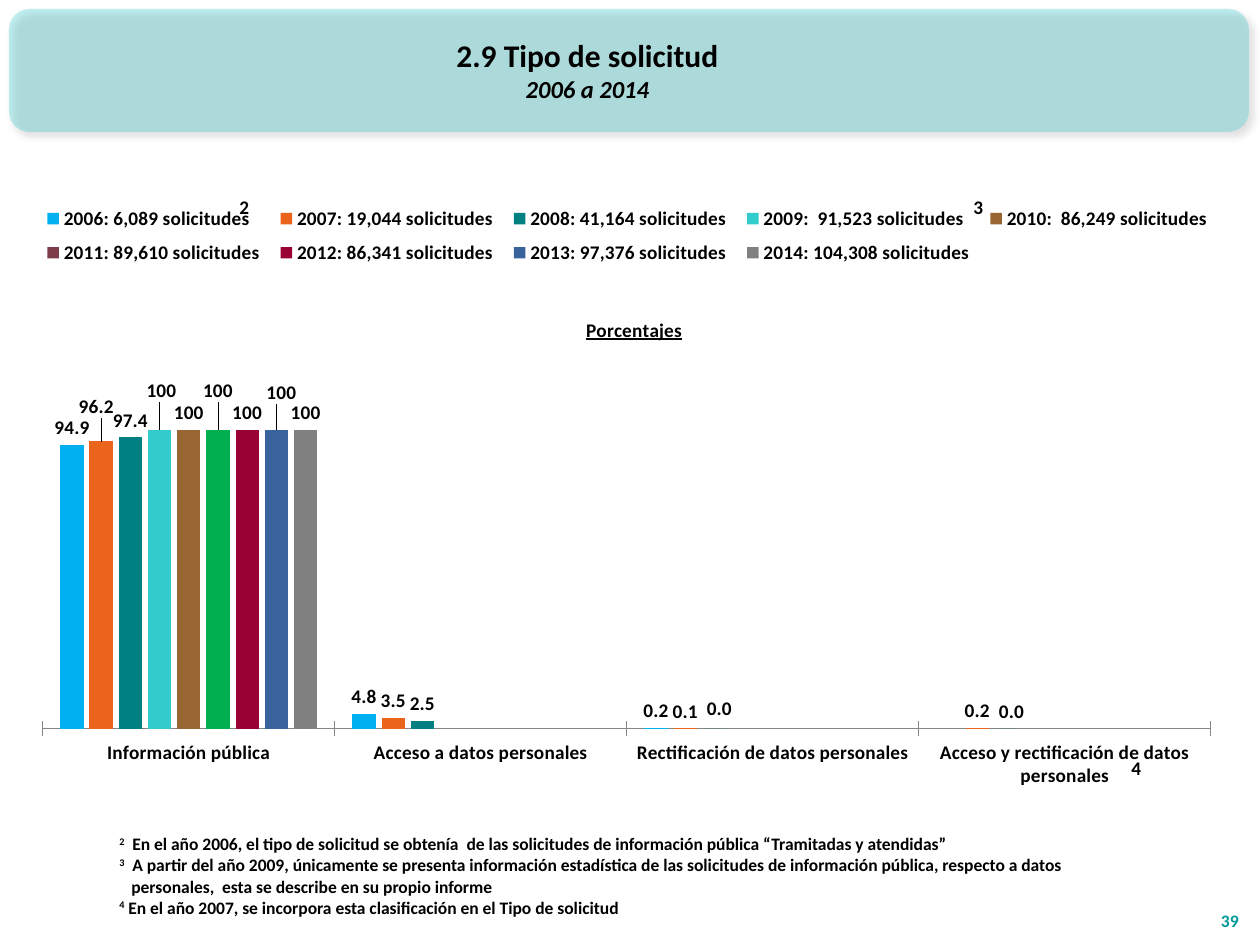
from dataclasses import dataclass

from lxml import etree
from pptx import Presentation
from pptx.chart.data import CategoryChartData
from pptx.dml.color import RGBColor
from pptx.enum.chart import (XL_CHART_TYPE, XL_LABEL_POSITION, XL_LEGEND_POSITION,
                             XL_TICK_LABEL_POSITION, XL_TICK_MARK)
from pptx.enum.shapes import MSO_SHAPE
from pptx.enum.text import MSO_ANCHOR, PP_ALIGN
from pptx.oxml import parse_xml
from pptx.oxml.ns import nsdecls, qn
from pptx.util import Emu, Pt

LEFT, CENTER, RIGHT = PP_ALIGN.LEFT, PP_ALIGN.CENTER, PP_ALIGN.RIGHT
TOP, MIDDLE, BOTTOM = MSO_ANCHOR.TOP, MSO_ANCHOR.MIDDLE, MSO_ANCHOR.BOTTOM
OUTSIDE_END = XL_LABEL_POSITION.OUTSIDE_END


@dataclass(frozen=True)
class Theme:
    font: str = "Calibri"
    ink: str = "000000"
    banner: str = "33CCCC"
    page: str = "009999"
    axis: str = "868686"
    title: int = 18
    subtitle: int = 14
    body: int = 11
    note: int = 10


THEME = Theme()

CATEGORIES = ["Información pública", "Acceso a datos personales",
              "Rectificación de datos personales",
              "Acceso y rectificación de datos personales"]

# name, values, colour, number format, {point: label shift in px}
SERIES = [
    ("2006: 6,089 solicitudes", (94.9, 4.8, 0.2, None), "00B0F0", "0.0", {}),
    ("2007: 19,044 solicitudes", (96.2, 3.5, 0.1, 0.2), "EB641B", "0.0", {0: (-5, -18)}),
    ("2008: 41,164 solicitudes", (97.4, 2.5, 0, 0), "008080", "0.0",
     {2: (5, -3), 3: (5, 0)}),
    ("2009:  91,523 solicitudes", (100, None, None, None), "33CCCC", "General",
     {0: (2, -22)}),
    ("2010:  86,249 solicitudes", (100, None, None, None), "996633", "General", {}),
    ("2011: 89,610 solicitudes", (100, None, None, None), "7D3C4A", "General",
     {0: (0, -22)}),
    ("2012: 86,341 solicitudes", (100, None, None, None), "990033", "General", {}),
    ("2013: 97,376 solicitudes", (100, None, None, None), "39639D", "General",
     {0: (5, -20)}),
    ("2014: 104,308 solicitudes", (100, None, None, None), "808080", "General", {}),
]
POINT_COLORS = {(5, 0): "00B050"}  # (series, point)

# superscript, text, left margin in px
NOTES = [
    ("2", "  En el año 2006, el tipo de solicitud se obtenía  de las solicitudes "
          "de información pública “Tramitadas y atendidas”", 0),
    ("3", "  A partir del año 2009, únicamente se presenta información estadística "
          "de las solicitudes de información pública, respecto a datos", 0),
    ("", "personales,  esta se describe en su propio informe", 12),
    ("4", " En el año 2007, se incorpora esta clasificación en el Tipo de solicitud", 0),
]
NOTE_MARKS = [("2", 227, 189), ("3", 961, 189), ("4", 1119, 750)]

CHART_BOX = (21, 178, 1213, 610)


def px(n):
    return Emu(round(n * 914400 / 126))


def rgb(color):
    return RGBColor.from_string(color)


def style_font(font, size, color=THEME.ink, italic=None):
    font.name, font.size, font.bold, font.italic = THEME.font, Pt(size), True, italic
    font.color.rgb = rgb(color)


def add_text(slide, box, paragraphs, align=LEFT, anchor=TOP):
    """Each paragraph is (left margin, runs); a run is (text, format dict)."""
    tf = slide.shapes.add_textbox(*map(px, box)).text_frame
    tf.word_wrap, tf.vertical_anchor = True, anchor
    for i, (margin, runs) in enumerate(paragraphs):
        p = tf.add_paragraph() if i else tf.paragraphs[0]
        p.alignment = align
        if margin:
            p._p.get_or_add_pPr().set("marL", str(px(margin)))
        for text, fmt in runs:
            fmt = dict(fmt)
            raised = fmt.pop("raised", False)
            r = p.add_run()
            r.text = text
            style_font(r.font, **fmt)
            if raised:
                r._r.get_or_add_rPr().set("baseline", "30000")


def set_layout(element, index, inner=False, **fractions):
    """Place a chart part by fractions of the chart; index is the layout's child position."""
    for old in element.findall(qn("c:layout")):
        element.remove(old)
    layout = parse_xml(f"<c:layout {nsdecls('c')}><c:manualLayout/></c:layout>")
    values = {"layoutTarget": "inner"} if inner else {}
    if "w" in fractions:
        values.update(xMode="edge", yMode="edge")
    for tag, value in {**values, **fractions}.items():
        etree.SubElement(layout[0], qn(f"c:{tag}")).set("val", str(value))
    element.insert(index, layout)


def add_banner(slide):
    sp = slide.shapes.add_shape(MSO_SHAPE.ROUNDED_RECTANGLE, *map(px, (9, 9, 1240, 123)))
    sp.fill.solid()
    sp.fill.fore_color.rgb = rgb(THEME.banner)
    sp.line.fill.background()
    sp.shadow.inherit = False
    pr = sp._element.spPr
    etree.SubElement(pr.find(".//" + qn("a:srgbClr")), qn("a:alpha")).set("val", "30000")
    pr.find(qn("a:effectLst")).append(parse_xml(
        f'<a:outerShdw {nsdecls("a")} blurRad="{Pt(4)}" dist="{Pt(3)}" dir="2700000" '
        'algn="tl" rotWithShape="0"><a:srgbClr val="000000"><a:alpha val="40000"/>'
        '</a:srgbClr></a:outerShdw>'))


def style_series(index, s, color, number_format, shifts):
    s.format.fill.solid()
    s.format.fill.fore_color.rgb = rgb(color)
    s.invert_if_negative = False
    for (row, point), point_color in POINT_COLORS.items():
        if row == index:
            fill = s.points[point].format.fill
            fill.solid()
            fill.fore_color.rgb = rgb(point_color)
    labels = s.data_labels
    labels.show_value, labels.position = True, OUTSIDE_END
    labels.number_format, labels.number_format_is_linked = number_format, False
    style_font(labels.font, THEME.body)
    for point, (dx, dy) in shifts.items():
        label = s.points[point].data_label
        style_font(label.font, THEME.body)
        label.position = OUTSIDE_END
        node = s._element.xpath(f'.//c:dLbl[c:idx/@val="{point}"]')[0]
        set_layout(node, 1, x=round(dx / CHART_BOX[2], 4), y=round(dy / CHART_BOX[3], 4))


def add_request_chart(slide):
    data = CategoryChartData()
    data.categories = CATEGORIES
    for name, values, _, number_format, _ in SERIES:
        data.add_series(name, values, number_format)
    chart = slide.shapes.add_chart(XL_CHART_TYPE.COLUMN_CLUSTERED,
                                   *map(px, CHART_BOX), data).chart
    style_font(chart.font, THEME.body)

    title = chart.chart_title
    r = title.text_frame.paragraphs[0].add_run()
    r.text = "Porcentajes"
    style_font(r.font, THEME.body)
    r.font.underline = True
    set_layout(title._element, 1, xMode="edge", yMode="edge", x=0.463, y=0.223)
    title._element.find(qn("c:overlay")).set("val", "1")

    chart.has_legend = True
    legend = chart.legend
    legend.position, legend.include_in_layout = XL_LEGEND_POSITION.TOP, False
    style_font(legend.font, THEME.body)
    set_layout(legend._element, 1, x=0.01, y=0.03, w=0.98, h=0.13)

    plot = chart.plots[0]
    plot.gap_width, plot.overlap, plot.vary_by_categories = 150, -25, False
    set_layout(chart._chartSpace.chart.plotArea, 0, inner=True,
               x=0.018, y=0.316, w=0.963, h=0.59)
    values = chart.value_axis
    values.minimum_scale, values.maximum_scale = 0, 120
    values.has_major_gridlines = values.visible = False
    axis = chart.category_axis
    axis.major_tick_mark = XL_TICK_MARK.CROSS
    axis.tick_label_position = XL_TICK_LABEL_POSITION.LOW
    axis.format.line.color.rgb = rgb(THEME.axis)
    style_font(axis.tick_labels.font, THEME.body)
    for i, (s, (_, _, *look)) in enumerate(zip(plot.series, SERIES)):
        style_series(i, s, *look)


def main():
    prs = Presentation()
    prs.slide_width, prs.slide_height = px(1260), px(945)
    slide = prs.slides.add_slide(prs.slide_layouts[6])
    note = {"size": THEME.note}

    add_banner(slide)
    add_text(slide, (10, 11, 1155, 118), [
        (0, [("2.9 Tipo de solicitud", {"size": THEME.title})]),
        (0, [("2006 a 2014", {"size": THEME.subtitle, "italic": True})]),
    ], CENTER, MIDDLE)
    add_request_chart(slide)
    add_text(slide, (107, 827, 1043, 97), [
        (margin, [(mark, {**note, "raised": True})] * bool(mark) + [(text, note)])
        for mark, text, margin in NOTES], anchor=MIDDLE)
    for mark, x, y in NOTE_MARKS:
        add_text(slide, (x, y, 59, 37), [(0, [(mark, {"size": THEME.body})])])
    add_text(slide, (1201, 887, 50, 50),
             [(0, [("39", {**note, "color": THEME.page})])], RIGHT, BOTTOM)
    prs.save("out.pptx")


if __name__ == "__main__":
    main()
